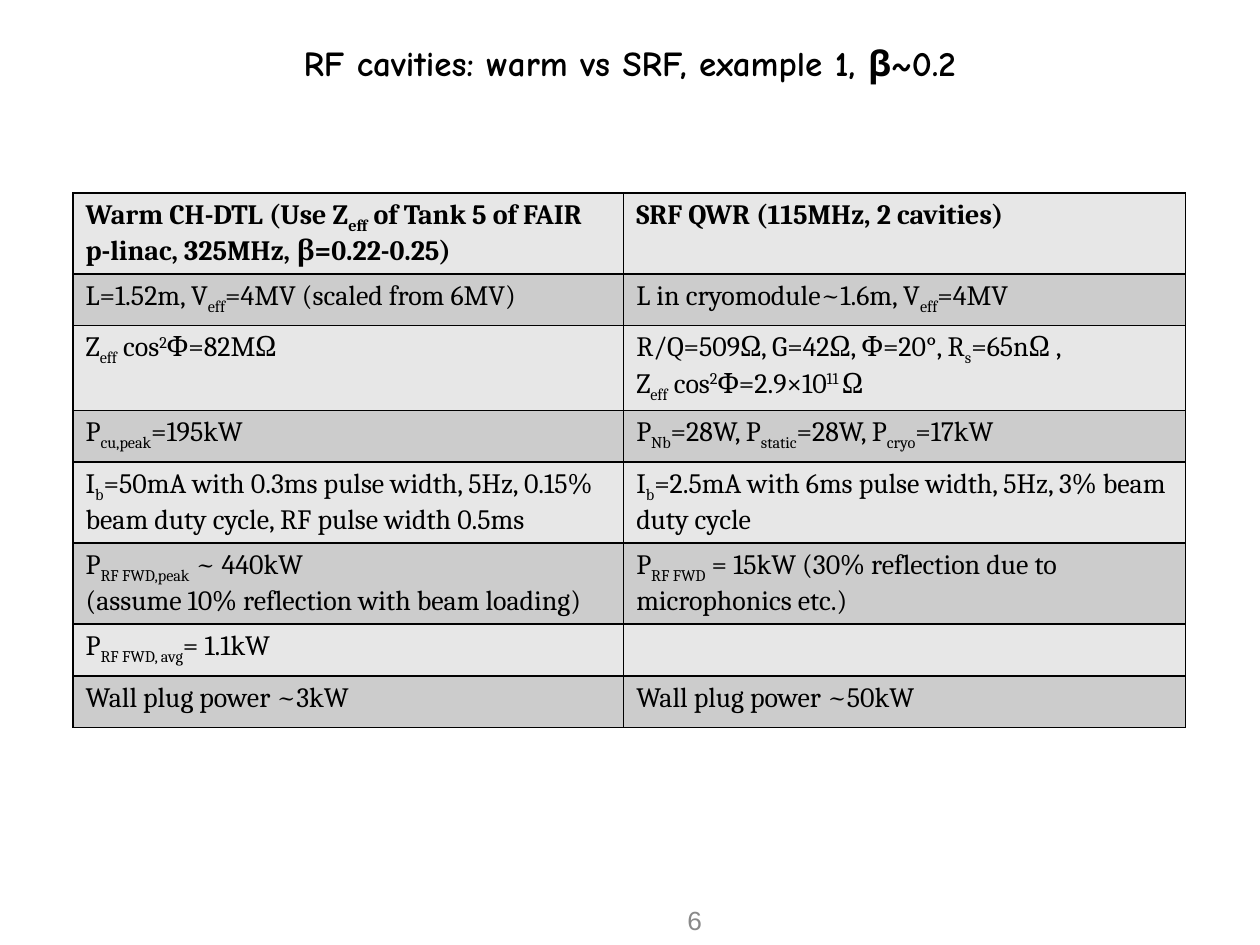
from pptx import Presentation
from pptx.dml.color import RGBColor
from pptx.enum.text import MSO_ANCHOR, PP_ALIGN
from pptx.oxml import parse_xml
from pptx.oxml.ns import nsdecls
from pptx.util import Inches, Pt

COLORS = {"text": "000000", "border": "000000", "number": "898989",
          "light": "E7E7E7", "dark": "CCCCCC"}
BASELINES = {"_": "-25000", "^": "30000"}
TITLE = "RF cavities: warm vs SRF, example 1, β~0.2"
PAGE_NUMBER = "6"
COLUMN_WIDTHS = (4.37, 4.46)
ROW_HEIGHT = 0.41
ROWS = [
    ("Warm CH-DTL (Use Z|_eff| of Tank 5 of FAIR p-linac, 325MHz, β=0.22-0.25)",
     "SRF QWR (115MHz, 2 cavities)"),
    ("L=1.52m, V|_eff|=4MV (scaled from 6MV)",
     "L in cryomodule~1.6m, V|_eff|=4MV"),
    ("Z|_eff| cos|^2|Φ=82MΩ",
     "R/Q=509Ω, G=42Ω, Φ=20°, R|_s|=65nΩ ,\nZ|_eff| cos|^2|Φ=2.9×10|^11 |Ω"),
    ("P|_cu,peak|=195kW",
     "P|_Nb|=28W, P|_static|=28W, P|_cryo|=17kW"),
    ("I|_b|=50mA with 0.3ms pulse width, 5Hz, 0.15% beam duty cycle, RF pulse width 0.5ms",
     "I|_b|=2.5mA with 6ms pulse width, 5Hz, 3% beam duty cycle"),
    ("P|_RF FWD,peak| ~ 440kW\n(assume 10% reflection with beam loading)",
     "P|_RF FWD| = 15kW (30% reflection due to microphonics etc.)"),
    ("P|_RF FWD, avg|= 1.1kW", ""),
    ("Wall plug power ~3kW", "Wall plug power ~50kW"),
]


def set_font(paragraph, name, size, color, bold=False):
    font = paragraph.font
    font.name, font.size, font.bold = name, Pt(size), bold
    font.color.rgb = RGBColor.from_string(COLORS[color])


def add_marked_runs(paragraph, text):
    for part in text.split("|"):
        run = paragraph.add_run()
        baseline = BASELINES.get(part[:1])
        run.text = part[1:] if baseline else part
        if baseline:
            run.font._element.set("baseline", baseline)


def add_borders(cell):
    properties = cell._tc.get_or_add_tcPr()
    for side in "LRTB":
        properties.append(parse_xml(
            f'<a:ln{side} {nsdecls("a")} w="12700"><a:solidFill>'
            f'<a:srgbClr val="{COLORS["border"]}"/></a:solidFill></a:ln{side}>'))


def fill_cell(cell, text, fill, bold):
    add_borders(cell)
    cell.fill.solid()
    cell.fill.fore_color.rgb = RGBColor.from_string(COLORS[fill])
    frame = cell.text_frame
    for index, line in enumerate(text.split("\n")):
        paragraph = frame.add_paragraph() if index else frame.paragraphs[0]
        if line:
            add_marked_runs(paragraph, line)
        set_font(paragraph, "Cambria", 16, "text", bold)


def add_title(slide):
    title = slide.shapes.title
    title.left, title.top, title.width, title.height = map(Inches, (0.75, 0, 8.5, 1))
    title.text_frame.text = TITLE
    title.text_frame.vertical_anchor = MSO_ANCHOR.MIDDLE
    paragraph = title.text_frame.paragraphs[0]
    paragraph.alignment = PP_ALIGN.CENTER
    set_font(paragraph, "Comic Neue", 20, "text", True)


def add_comparison_table(slide):
    table = slide.shapes.add_table(
        len(ROWS), len(COLUMN_WIDTHS), Inches(0.58), Inches(1.53),
        Inches(sum(COLUMN_WIDTHS)), Inches(ROW_HEIGHT * len(ROWS))).table
    table.first_row = table.horz_banding = False
    for column, width in zip(table.columns, COLUMN_WIDTHS):
        column.width = Inches(width)
    for row_index, texts in enumerate(ROWS):
        table.rows[row_index].height = Inches(ROW_HEIGHT)
        fill = "dark" if row_index % 2 else "light"
        for column_index, text in enumerate(texts):
            fill_cell(table.cell(row_index, column_index), text, fill, row_index == 0)


def add_page_number(slide):
    box = slide.shapes.add_textbox(*map(Inches, (4.92, 7.1, 0.75, 0.4)))
    frame = box.text_frame
    frame.word_wrap = True
    frame.vertical_anchor = MSO_ANCHOR.MIDDLE
    frame.text = PAGE_NUMBER
    paragraph = frame.paragraphs[0]
    paragraph.alignment = PP_ALIGN.RIGHT
    set_font(paragraph, "Arial", 15, "number")


def main():
    """Build the slide comparing warm and superconducting RF cavities."""
    presentation = Presentation()
    presentation.slide_width, presentation.slide_height = Inches(10), Inches(7.5)
    slide = presentation.slides.add_slide(presentation.slide_layouts[5])
    add_title(slide)
    add_comparison_table(slide)
    add_page_number(slide)
    presentation.save("out.pptx")


if __name__ == "__main__":
    main()
